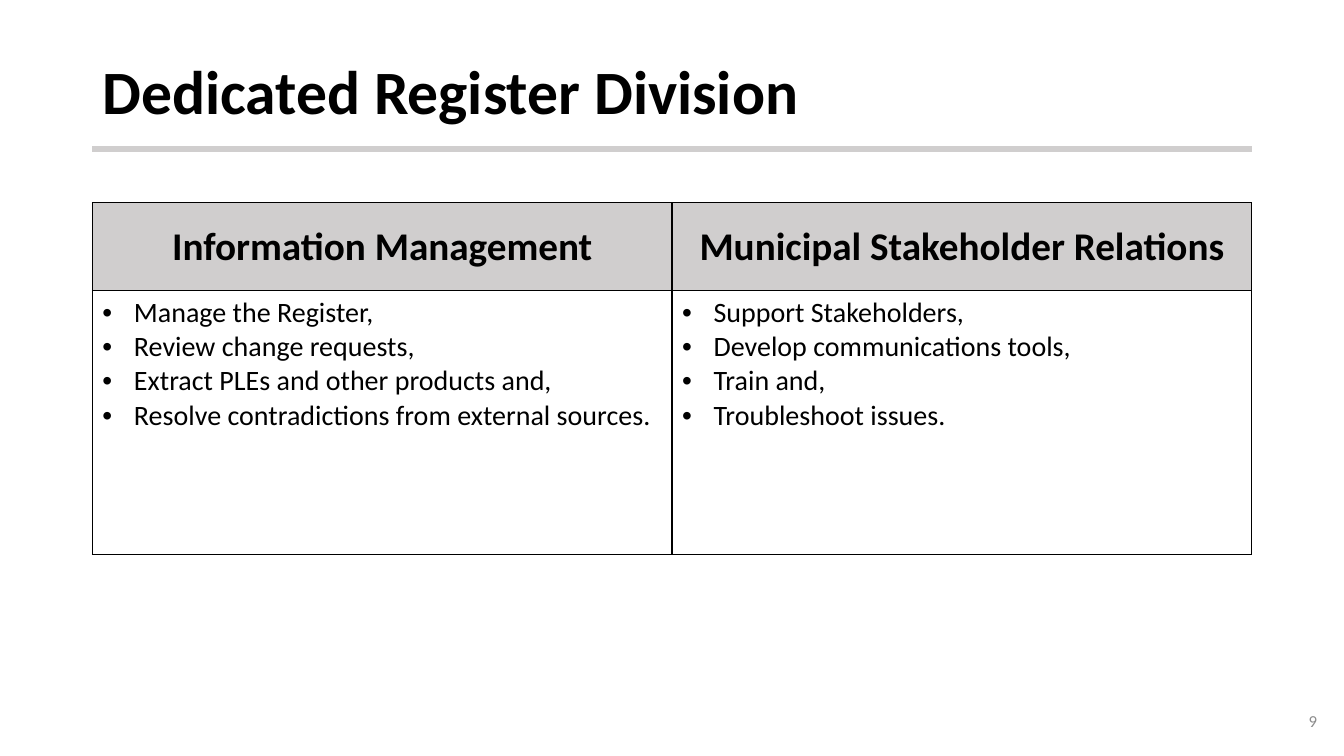
from dataclasses import dataclass
from lxml import etree
from pptx import Presentation
from pptx import util as u
from pptx.dml.color import RGBColor
from pptx.enum import shapes, text
from pptx.oxml import ns


@dataclass
class Theme:
    font: str = "Calibri"
    ink: str = "000000"
    accent: str = "D0CECE"
    muted: str = "8C8C8C"
    title: int = 44
    heading: int = 28
    body: int = 20
    number: int = 12


theme = Theme()
LEFT, WIDTH = 66, 828
ROW_HEIGHTS = [62.6, 188.6]
BULLET_INDENT = 22.5
COLUMNS = {
    "Information Management": [
        "Manage the Register,",
        "Review change requests,",
        "Extract PLEs and other products and,",
        "Resolve contradictions from external sources.",
    ],
    "Municipal Stakeholder Relations": [
        "Support Stakeholders,",
        "Develop communications tools,",
        "Train and,",
        "Troubleshoot issues.",
    ],
}


def write(p, words, size, color=theme.ink, bold=False, align=text.PP_ALIGN.LEFT):
    p.alignment = align
    r = p.add_run()
    r.text = words
    for name, value in {"name": theme.font, "size": u.Pt(size), "bold": bold}.items():
        setattr(r.font, name, value)
    r.font.color.rgb = RGBColor.from_string(color)


def add_xml(parent, tag, **attributes):
    return etree.SubElement(parent, ns.qn(tag), attributes)


prs = Presentation()
prs.slide_width, prs.slide_height = u.Pt(960), u.Pt(540)
s = prs.slides.add_slide(prs.slide_layouts[6])

rule = s.shapes.add_connector(
    shapes.MSO_CONNECTOR.STRAIGHT, u.Pt(LEFT), u.Pt(106.5), u.Pt(LEFT + WIDTH), u.Pt(106.5))
rule.line.width = u.Pt(4.5)
rule.line.color.rgb = RGBColor.from_string(theme.accent)
add_xml(rule._element.spPr, "a:effectLst")

labels = [
    ((LEFT, 28.8, WIDTH, 77), 0.9,
     dict(words="Dedicated Register Division", size=theme.title, bold=True)),
    ((732, 500.5, 216, 28.8), 1.0,
     dict(words="9", size=theme.number, color=theme.muted, align=text.PP_ALIGN.RIGHT)),
]
for box, spacing, content in labels:
    tf = s.shapes.add_textbox(*map(u.Pt, box)).text_frame
    tf.word_wrap = True
    tf.vertical_anchor = text.MSO_ANCHOR.MIDDLE
    tf.paragraphs[0].line_spacing = spacing
    write(tf.paragraphs[0], **content)

table = s.shapes.add_table(
    2, len(COLUMNS), u.Pt(LEFT), u.Pt(144.9), u.Pt(WIDTH), u.Pt(sum(ROW_HEIGHTS))).table
table.horz_banding = False
for row, height in zip(table.rows, ROW_HEIGHTS):
    row.height = u.Pt(height)

for column, (heading, duties) in enumerate(COLUMNS.items()):
    table.columns[column].width = u.Pt(WIDTH / len(COLUMNS))
    header, body = table.cell(0, column), table.cell(1, column)
    for cell in (header, body):
        tcPr = cell._tc.get_or_add_tcPr()
        for side in ("lnL", "lnR", "lnT", "lnB"):
            border = add_xml(tcPr, "a:" + side, w=str(u.Pt(1)))
            add_xml(add_xml(border, "a:solidFill"), "a:srgbClr", val=theme.ink)

    header.fill.solid()
    header.fill.fore_color.rgb = RGBColor.from_string(theme.accent)
    header.vertical_anchor = text.MSO_ANCHOR.MIDDLE
    write(header.text_frame.paragraphs[0], heading, theme.heading,
          bold=True, align=text.PP_ALIGN.CENTER)

    body.fill.background()
    tf = body.text_frame
    for i, duty in enumerate(duties):
        p = tf.add_paragraph() if i else tf.paragraphs[0]
        write(p, duty, theme.body)
        pPr = p._p.get_or_add_pPr()
        pPr.set("marL", str(u.Pt(BULLET_INDENT)))
        pPr.set("indent", str(u.Pt(-BULLET_INDENT)))
        add_xml(pPr, "a:buFont", typeface="Arial")
        add_xml(pPr, "a:buChar", char="•")

prs.save("out.pptx")
